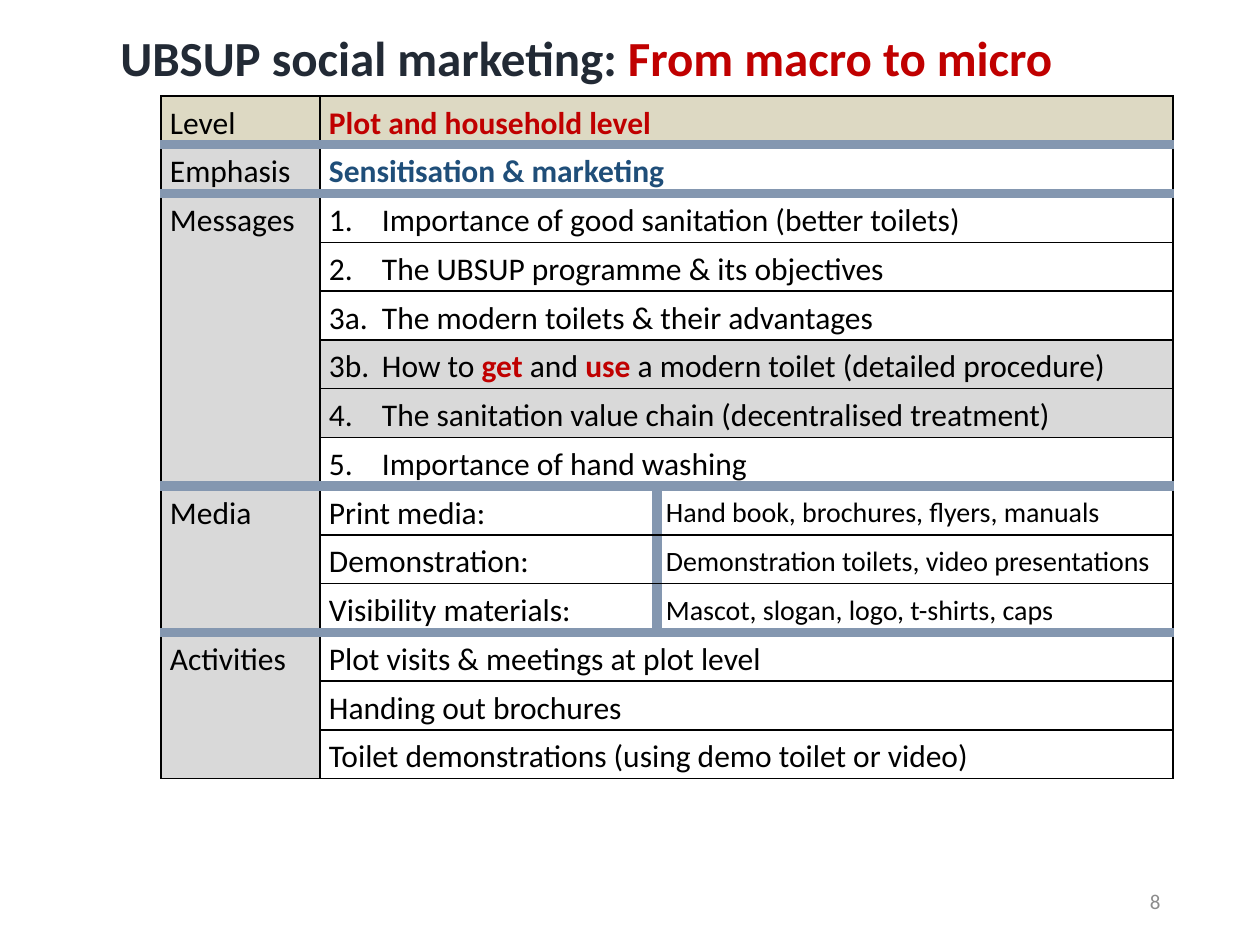
from collections import namedtuple
from dataclasses import dataclass

from lxml.etree import SubElement
from pptx import Presentation
from pptx.dml.color import RGBColor
from pptx.enum.text import MSO_ANCHOR, PP_ALIGN
from pptx.oxml.ns import qn
from pptx.util import Emu, Pt

SCALE = 914400 // 126
Box = namedtuple("Box", "left top width height")
Section = namedtuple("Section", "label label_fill rows")
Row = namedtuple("Row", "cells fill", defaults=[None])


@dataclass(frozen=True)
class Theme:
    font: str = "Calibri"
    title_size: int = 28
    body_size: int = 18
    detail_size: int = 16
    number_size: int = 12
    title: str = "222A35"
    accent: str = "C00000"
    emphasis: str = "1F4E79"
    text: str = "000000"
    number: str = "8C8C8C"
    header: str = "DDD9C3"
    shade: str = "D9D9D9"
    divider: str = "8497B0"


THEME = Theme()
THIN = (THEME.text, 1)
THICK = (THEME.divider, 6)


def accent(text):
    return text, THEME.accent, True


def plain(text):
    return text, THEME.text, False


SECTIONS = [
    Section("Level", THEME.header, [
        Row([[accent("Plot and household level")]], THEME.header)]),
    Section("Emphasis", THEME.shade, [
        Row([[("Sensitisation & marketing", THEME.emphasis, True)]])]),
    Section("Messages", THEME.shade, [
        Row([[plain("1.\tImportance of good sanitation (better toilets)")]]),
        Row([[plain("2.\tThe UBSUP programme & its objectives")]]),
        Row([[plain("3a.\tThe modern toilets & their advantages")]]),
        Row([[plain("3b.\tHow to "), accent("get"), plain(" and "), accent("use"),
              plain(" a modern toilet (detailed procedure)")]], THEME.shade),
        Row([[plain("4.\tThe sanitation value chain (decentralised treatment)")]], THEME.shade),
        Row([[plain("5.\tImportance of hand washing")]])]),
    Section("Media", THEME.shade, [
        Row([[plain("Print media:")], [plain("Hand book, brochures, flyers, manuals")]]),
        Row([[plain("Demonstration:")], [plain("Demonstration toilets, video presentations")]]),
        Row([[plain("Visibility materials:")], [plain("Mascot, slogan, logo, t-shirts, caps")]])]),
    Section("Activities", THEME.shade, [
        Row([[plain("Plot visits & meetings at plot level")]]),
        Row([[plain("Handing out brochures")]]),
        Row([[plain("Toilet demonstrations (using demo toilet or video)")]])]),
]


def px(length):
    return Emu(length * SCALE)


def add_runs(paragraph, runs, size):
    for text, color, bold in runs:
        run = paragraph.add_run()
        run.text = text
        run.font.name = THEME.font
        run.font.size = Pt(size)
        run.font.bold = bold
        run.font.color.rgb = RGBColor.from_string(color)


def add_text(slide, box, runs, size, alignment=PP_ALIGN.LEFT, spacing=1.0):
    frame = slide.shapes.add_textbox(*map(px, box)).text_frame
    frame.word_wrap = True
    frame.vertical_anchor = MSO_ANCHOR.MIDDLE
    paragraph = frame.paragraphs[0]
    paragraph.alignment = alignment
    paragraph.line_spacing = spacing
    add_runs(paragraph, runs, size)


def set_borders(cell, left, right, top, bottom):
    properties = cell._tc.get_or_add_tcPr()
    edges = {"a:lnL": left, "a:lnR": right, "a:lnT": top, "a:lnB": bottom}
    for position, (tag, border) in enumerate(edges.items()):
        line = SubElement(properties, qn(tag))
        properties.insert(position, line)
        if border is None:
            SubElement(line, qn("a:noFill"))
            continue
        color, width = border
        line.set("w", str(Pt(width)))
        fill = SubElement(line, qn("a:solidFill"))
        SubElement(fill, qn("a:srgbClr"), val=color)


def fill_cell(cell, runs, color, size):
    cell.margin_left = cell.margin_right = px(9)
    cell.margin_top = cell.margin_bottom = 0
    cell.vertical_anchor = MSO_ANCHOR.MIDDLE
    if color:
        cell.fill.solid()
        cell.fill.fore_color.rgb = RGBColor.from_string(color)
    else:
        cell.fill.background()
    paragraph = cell.text_frame.paragraphs[0]
    paragraph.line_spacing = 1.15
    if runs and "\t" in runs[0][0]:
        properties = paragraph._p.get_or_add_pPr()
        properties.set("marL", str(px(53)))
        properties.set("indent", str(-px(53)))
    add_runs(paragraph, runs, size)


def add_row(table, index, row, top, bottom):
    first, last = table.cell(index, 1), table.cell(index, 2)
    if len(row.cells) == 1:
        first.merge(last)
        middle = THIN
    else:
        middle = THICK
        fill_cell(last, row.cells[1], row.fill, THEME.detail_size)
    fill_cell(first, row.cells[0], row.fill, THEME.body_size)
    set_borders(first, THIN, middle, top, bottom)
    set_borders(last, middle, THIN, top, bottom)


def add_level_table(slide, box):
    row_count = sum(len(section.rows) for section in SECTIONS)
    frame = slide.shapes.add_table(row_count, 3, *map(px, box))
    table = frame.table
    table.first_row = table.horz_banding = False
    style = table._tbl.tblPr.find(qn("a:tableStyleId"))
    style.text = "{2D5ABB26-0587-4C30-8999-92F81FD0307C}"
    label_width, topic_width = 159, 337
    widths = label_width, topic_width, box.width - label_width - topic_width
    for column, width in zip(table.columns, widths):
        column.width = px(width)
    for table_row in table.rows:
        table_row.height = Emu(px(box.height) // row_count)

    index = 0
    for section in SECTIONS:
        for position, row in enumerate(section.rows):
            opens = position == 0
            closes = position == len(section.rows) - 1
            section_top = THIN if index == 0 else THICK
            section_bottom = THIN if index == row_count - 1 else THICK
            label = table.cell(index, 0)
            fill_cell(label, [plain(section.label)] if opens else [],
                      section.label_fill, THEME.body_size)
            set_borders(label, THIN, THIN, section_top if opens else None,
                        section_bottom if closes else None)
            add_row(table, index, row, section_top if opens else THIN,
                    section_bottom if closes else THIN)
            index += 1


def add_title(slide, box):
    runs = [("UBSUP social marketing: ", THEME.title, True), accent("From macro to micro")]
    add_text(slide, box, runs, THEME.title_size, spacing=0.9)


def add_page_number(slide, box):
    add_text(slide, box, [("8", THEME.number, False)], THEME.number_size, PP_ALIGN.RIGHT)


def main():
    presentation = Presentation()
    presentation.slide_width, presentation.slide_height = px(1260), px(945)
    slide = presentation.slides.add_slide(presentation.slide_layouts[6])
    add_title(slide, Box(108, 26, 1089, 69))
    add_level_table(slide, Box(161, 96, 1012, 683))
    add_page_number(slide, Box(890, 876, 283, 50))
    presentation.save("out.pptx")


if __name__ == "__main__":
    main()
